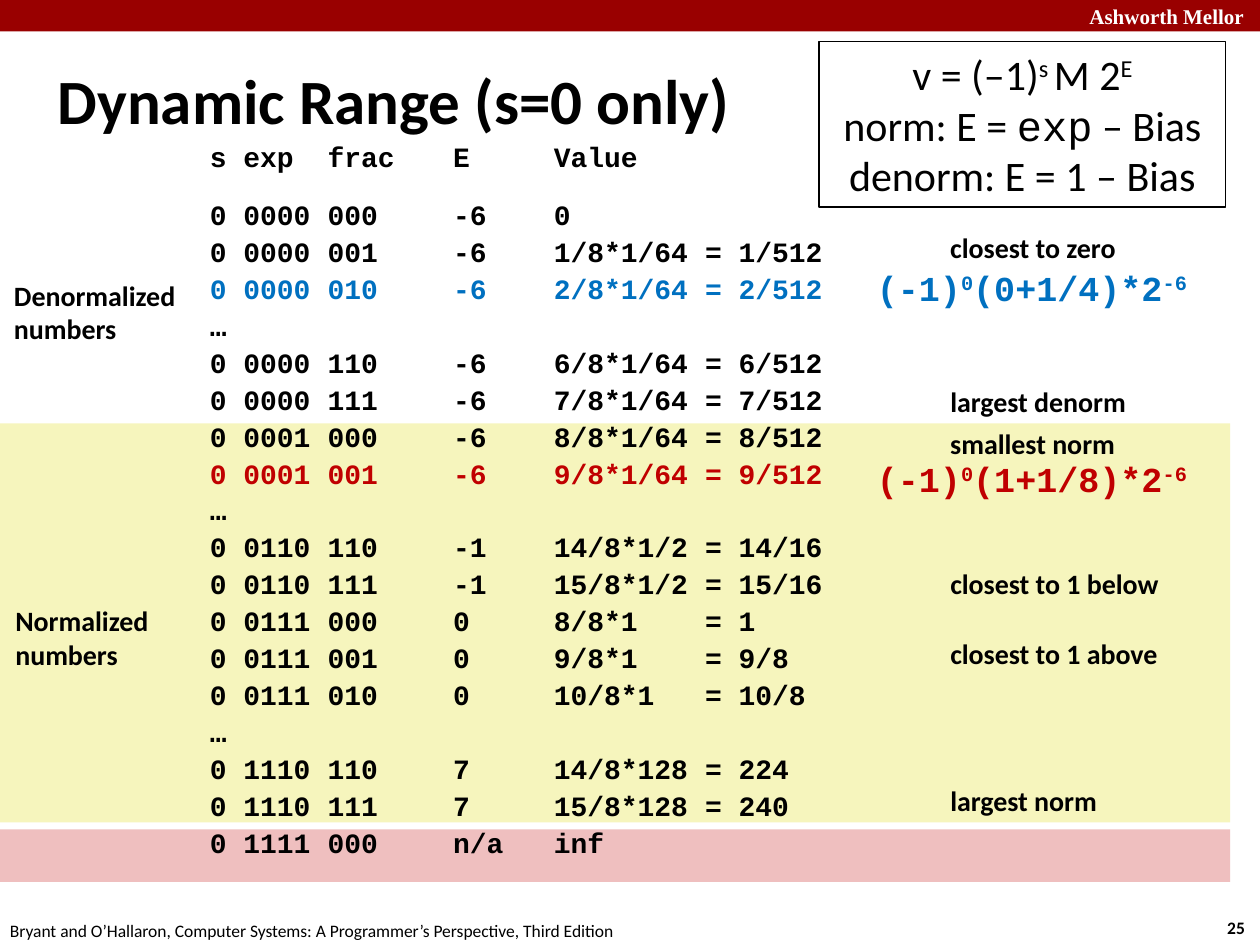
from lxml import etree
from pptx import Presentation
from pptx import util as u
from pptx.dml.color import RGBColor
from pptx.enum import shapes, text
from pptx.oxml import ns

BLACK = RGBColor(0x00, 0x00, 0x00)
WHITE = RGBColor(0xFF, 0xFF, 0xFF)
MAROON = RGBColor(0x99, 0x00, 0x00)
BLUE = RGBColor(0x00, 0x70, 0xC0)
RED = RGBColor(0xC0, 0x00, 0x00)
PINK = RGBColor(0xEF, 0xBF, 0xBF)
YELLOW = RGBColor(0xF6, 0xF5, 0xBD)

SANS, MONO, SERIF = "Calibri", "Courier New", "Times New Roman"
LEFT, CENTER, RIGHT = text.PP_ALIGN.LEFT, text.PP_ALIGN.CENTER, text.PP_ALIGN.RIGHT
TABS = (67.2, 139, 196.5, 283)  # frac, E, Value, equals sign


class Deck:
    """Holds the text style and the current slide."""

    def __init__(self, width, height):
        self.prs = Presentation()
        self.prs.slide_width, self.prs.slide_height = u.Pt(width), u.Pt(height)
        self.s = self.prs.slides.add_slide(self.prs.slide_layouts[6])

    def style(self, r, size, color=BLACK, bold=True, font=SANS, raised=0):
        r.font.size, r.font.bold, r.font.name = u.Pt(size), bold, font
        r.font.color.rgb = color
        if raised:
            r._r.get_or_add_rPr().set("baseline", str(raised * 1000))

    def rect(self, x, y, w, h, fill=None, line=None):
        sp = self.s.shapes.add_shape(shapes.MSO_SHAPE.RECTANGLE,
                                     u.Pt(x), u.Pt(y), u.Pt(w), u.Pt(h))
        sp.shadow.inherit = False
        if fill is None:
            sp.fill.background()
        else:
            sp.fill.solid()
            sp.fill.fore_color.rgb = fill
        if line is None:
            sp.line.fill.background()
        else:
            sp.line.color.rgb, sp.line.width = line, u.Pt(0.75)
        return sp

    def box(self, x, y, w, h, inset=None, wrap=False):
        sp = self.s.shapes.add_textbox(u.Pt(x), u.Pt(y), u.Pt(w), u.Pt(h))
        tf = sp.text_frame
        tf.word_wrap = wrap
        if inset is not None:
            tf.margin_left = tf.margin_right = u.Pt(inset)
            tf.margin_top = tf.margin_bottom = u.Pt(inset)
        return tf

    def label(self, words, x, y, w, h, size=16, align=LEFT, inset=3, **style):
        tf = self.box(x, y, w, h, inset)
        tf.text = words
        for p in tf.paragraphs:
            p.alignment = align
            self.style(p.runs[0], size, **style)
        return tf

    def pieces(self, p, parts, size, **style):
        """Fill a paragraph from (words, changes to the style) pairs."""
        for words, changes in parts:
            r = p.add_run()
            r.text = words
            self.style(r, size, **{**style, **changes})

    def table_text(self, rows, x, y, w, h):
        tf = self.box(x, y, w, h, inset=0, wrap=True)
        tf.text = "\n".join("\t".join(cells) for cells, _ in rows)
        for p, (_, color) in zip(tf.paragraphs, rows):
            p.line_spacing = 1.1
            tabs = etree.SubElement(p._p.get_or_add_pPr(), ns.qn("a:tabLst"))
            for stop in TABS:
                etree.SubElement(tabs, ns.qn("a:tab"), pos=str(u.Pt(stop)), algn="l")
            self.style(p.runs[0], 16, color, font=MONO)
        tf.paragraphs[1].space_before = u.Pt(12)


def main():
    d = Deck(720, 540)

    # Header and footer
    d.rect(0, 0, 720, 18, MAROON)
    d.label("Ashworth Mellor", 538, -1.5, 180, 21.6, 12, RIGHT, None,
            color=WHITE, font=SERIF)
    d.label("25", 693, 520.5, 26.6, 19.4, 10, CENTER, None)
    d.label("Bryant and O’Hallaron, Computer Systems: A Programmer’s Perspective, "
            "Third Edition", -5, 522, 366, 19.4, 10, CENTER, None, bold=False)

    # Bands behind the number classes
    d.rect(0, 474, 703, 30, PINK)
    d.rect(0, 242, 703, 228, YELLOW)

    # Encodings and values
    gap = (("…",), BLACK)
    d.table_text([
        (("s exp", "frac", "E", "Value"), BLACK),
        (("0 0000", "000", "-6", "0"), BLACK),
        (("0 0000", "001", "-6", "1/8*1/64", "= 1/512"), BLACK),
        (("0 0000", "010", "-6", "2/8*1/64", "= 2/512"), BLUE),
        gap,
        (("0 0000", "110", "-6", "6/8*1/64", "= 6/512"), BLACK),
        (("0 0000", "111", "-6", "7/8*1/64", "= 7/512"), BLACK),
        (("0 0001", "000", "-6", "8/8*1/64", "= 8/512"), BLACK),
        (("0 0001", "001", "-6", "9/8*1/64", "= 9/512"), RED),
        gap,
        (("0 0110", "110", "-1", "14/8*1/2", "= 14/16"), BLACK),
        (("0 0110", "111", "-1", "15/8*1/2", "= 15/16"), BLACK),
        (("0 0111", "000", "0", "8/8*1", "= 1"), BLACK),
        (("0 0111", "001", "0", "9/8*1", "= 9/8"), BLACK),
        (("0 0111", "010", "0", "10/8*1", "= 10/8"), BLACK),
        gap,
        (("0 1110", "110", "7", "14/8*128", "= 224"), BLACK),
        (("0 1110", "111", "7", "15/8*128", "= 240"), BLACK),
        (("0 1111", "000", "n/a", "inf"), BLACK),
    ], 120, 78, 366, 438)

    # Title
    tf = d.label("Dynamic Range (s=0 only)", 30, 20, 660, 73, 36)
    tf.word_wrap = True
    tf.vertical_anchor = text.MSO_ANCHOR.MIDDLE

    # Remarks beside the rows
    for words, y, w in (("closest to zero", 128.5, 119.5),
                        ("largest denorm", 216.5, 123),
                        ("smallest norm", 240.5, 116),
                        ("closest to 1 below", 321, 145.5),
                        ("closest to 1 above", 361, 146),
                        ("largest norm", 445, 103.5)):
        d.label(words, 540, y, w, 25)
    d.label("Denormalized\nnumbers", 5, 156, 111.5, 44.5)
    d.label("Normalized\nnumbers", 5.75, 342, 93, 44.5)

    # Formula box
    tf = d.rect(468, 23.75, 232.5, 94.5, line=BLACK).text_frame
    tf.word_wrap = True
    for i, parts in enumerate((
            [("v = (–1)", {}), ("s ", {"raised": 32}), ("M 2", {}), ("E", {"raised": 32})],
            [("norm: E = ", {}), ("exp", {"font": MONO}), (" – Bias", {})],
            [("denorm: E = 1 – Bias", {})])):
        p = tf.paragraphs[0] if i == 0 else tf.add_paragraph()
        p.alignment = CENTER
        d.pieces(p, parts, 24, bold=False)

    # Worked examples
    for factor, y, color in (("(0+1/4)*2", 148.5, BLUE), ("(1+1/8)*2", 257.75, RED)):
        p = d.box(494, y, 196.5, 31.5).paragraphs[0]
        d.pieces(p, [("(-1)", {}), ("0", {"raised": 30}), (factor, {}),
                     ("-6", {"raised": 30})], 20, color=color, font=MONO)

    d.prs.save("out.pptx")


if __name__ == "__main__":
    main()
